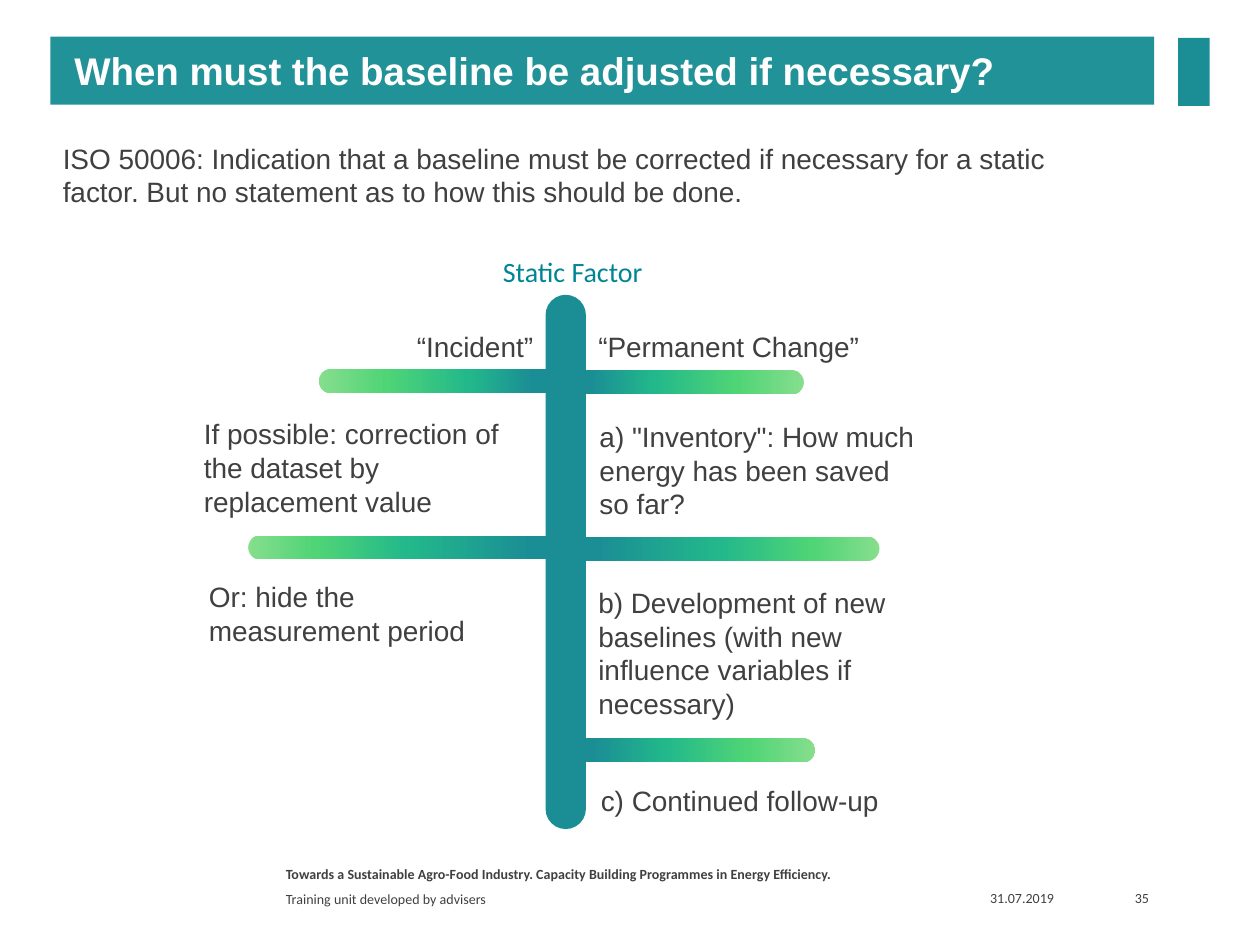
"""Build the slide on adjusting an energy baseline for static factors."""
from copy import deepcopy
from typing import NamedTuple

from pptx import Presentation
from pptx.dml.color import RGBColor
from pptx.enum.shapes import MSO_SHAPE
from pptx.enum.text import MSO_ANCHOR, PP_ALIGN
from pptx.oxml.ns import qn
from pptx.util import Inches, Pt

TEAL = "1B8E95"
GREY = "404040"
BAR_HEIGHT = 0.19


class Branch(NamedTuple):
    left: float
    top: float
    width: float
    stops: tuple[int, ...]
    rotation: int


class Label(NamedTuple):
    text: str
    left: float
    top: float
    width: float
    height: float
    align: PP_ALIGN = PP_ALIGN.LEFT


SHORT_STOPS = (0, 28, 62, 88)
LONG_STOPS = (0, 22, 52, 92)
BRANCH_COLOURS = ("86DE8D", "4FD476", "22B88B", TEAL)

BRANCHES = (
    Branch(2.53, 2.93, 1.92, SHORT_STOPS, 0),
    Branch(4.46, 2.94, 1.92, SHORT_STOPS, 180),
    Branch(1.97, 4.25, 2.44, LONG_STOPS, 0),
    Branch(4.54, 4.26, 2.44, LONG_STOPS, 180),
    Branch(4.55, 5.86, 1.92, (0, 28, 62, 92), 180),
)

LABELS = (
    Label("ISO 50006: Indication that a baseline must be corrected if necessary "
          "for a static factor. But no statement as to how this should be done.",
          0.4, 1.07, 8.5, 1.45),
    Label("“Incident”", 2.82, 2.57, 1.51, 0.37, PP_ALIGN.RIGHT),
    Label("“Permanent Change”", 4.65, 2.57, 2.67, 0.37),
    Label("If possible: correction of the dataset by replacement value",
          1.52, 3.26, 2.77, 1.18),
    Label('a) "Inventory": How much energy has been saved so far?',
          4.66, 3.28, 2.77, 0.91),
    Label("Or: hide the measurement period", 1.56, 4.55, 2.77, 0.91),
    Label("b) Development of new baselines (with new influence variables if necessary)",
          4.65, 4.6, 2.92, 1.18),
    Label("c) Continued follow-up", 4.67, 6.17, 3.5, 0.37),
)


def colour(code: str) -> RGBColor:
    """Turn a hex string into a colour."""
    return RGBColor.from_string(code)


def write(frame, text: str, *, size: float = 16, font: str = "Arial",
          code: str = GREY, bold: bool = False, align: PP_ALIGN = PP_ALIGN.LEFT,
          anchor: MSO_ANCHOR = MSO_ANCHOR.TOP) -> None:
    """Fill a text frame with one formatted paragraph."""
    frame.word_wrap = True
    frame.vertical_anchor = anchor
    paragraph = frame.paragraphs[0]
    paragraph.alignment = align
    run = paragraph.add_run()
    run.text = text
    run.font.size = Pt(size)
    run.font.name = font
    run.font.bold = bold
    run.font.color.rgb = colour(code)


def add_text(slide, label: Label, **style):
    """Add a text box for a label and return its frame."""
    box = slide.shapes.add_textbox(*map(Inches, label[1:5]))
    write(box.text_frame, label.text, align=label.align, **style)
    return box.text_frame


def add_block(slide, kind: MSO_SHAPE, left: float, top: float,
              width: float, height: float):
    """Add a teal shape without outline or shadow, its ends fully rounded if round."""
    block = slide.shapes.add_shape(kind, *map(Inches, (left, top, width, height)))
    block.shadow.inherit = False
    block.line.fill.background()
    block.fill.solid()
    block.fill.fore_color.rgb = colour(TEAL)
    if kind == MSO_SHAPE.ROUNDED_RECTANGLE:
        block.adjustments[0] = 0.5
    return block


def add_branch(slide, branch: Branch) -> None:
    """Add a bar that fades from light green at its tip to teal at the stem."""
    bar = add_block(slide, MSO_SHAPE.ROUNDED_RECTANGLE,
                    branch.left, branch.top, branch.width, BAR_HEIGHT)
    bar.rotation = branch.rotation
    bar.fill.gradient()
    bar.fill.gradient_angle = 0
    stop_list = next(bar.element.spPr.iter(qn("a:gsLst")))
    for _ in range(len(BRANCH_COLOURS) - len(stop_list)):
        stop_list.append(deepcopy(stop_list[0]))
    for stop, code, percent in zip(bar.fill.gradient_stops, BRANCH_COLOURS, branch.stops):
        stop.color.rgb = colour(code)
        stop.position = percent / 100


def add_title(slide, text: str) -> None:
    """Format the title placeholder as a teal banner."""
    title = slide.shapes.title
    title.left, title.top, title.width, title.height = map(Inches, (0.4, 0.29, 8.76, 0.54))
    title.fill.solid()
    title.fill.fore_color.rgb = colour("209298")
    title.text_frame.margin_left = Inches(0.19)
    write(title.text_frame, text, size=22, code="FFFFFF", bold=True,
          anchor=MSO_ANCHOR.MIDDLE)


def add_footer(slide) -> None:
    """Add the programme line, author, date and page number."""
    small = {"size": 8, "font": "Calibri"}
    add_text(slide, Label("Towards a Sustainable Agro-Food Industry. Capacity Building "
                          "Programmes in Energy Efficiency.", 2.17, 6.82, 5.5, 0.21),
             bold=True, **small)
    for label in (Label("Training unit developed by advisers", 2.17, 7.04, 5.5, 0.19),
                  Label("31.07.2019", 7.76, 7.03, 0.83, 0.2)):
        add_text(slide, label, anchor=MSO_ANCHOR.MIDDLE, **small)
    page = add_text(slide, Label("35", 8.6, 7.03, 0.56, 0.2, PP_ALIGN.RIGHT),
                    anchor=MSO_ANCHOR.MIDDLE, **small)
    page.margin_right = Inches(0.04)


def main() -> None:
    """Build and save the slide."""
    deck = Presentation()
    deck.slide_width, deck.slide_height = Inches(10), Inches(7.5)
    slide = deck.slides.add_slide(deck.slide_layouts.get_by_name("Title Only"))
    add_title(slide, "When must the baseline be adjusted if necessary?")
    add_block(slide, MSO_SHAPE.RECTANGLE, 9.35, 0.3, 0.25, 0.54)
    for branch in BRANCHES:
        add_branch(slide, branch)
    add_block(slide, MSO_SHAPE.ROUNDED_RECTANGLE, 4.33, 2.34, 0.32, 4.24)
    add_text(slide, Label("Static Factor", 3.52, 1.97, 2.05, 0.37, PP_ALIGN.CENTER),
             font="Calibri", code="008595")
    for label in LABELS:
        add_text(slide, label)
    add_footer(slide)
    deck.save("out.pptx")


if __name__ == "__main__":
    main()
